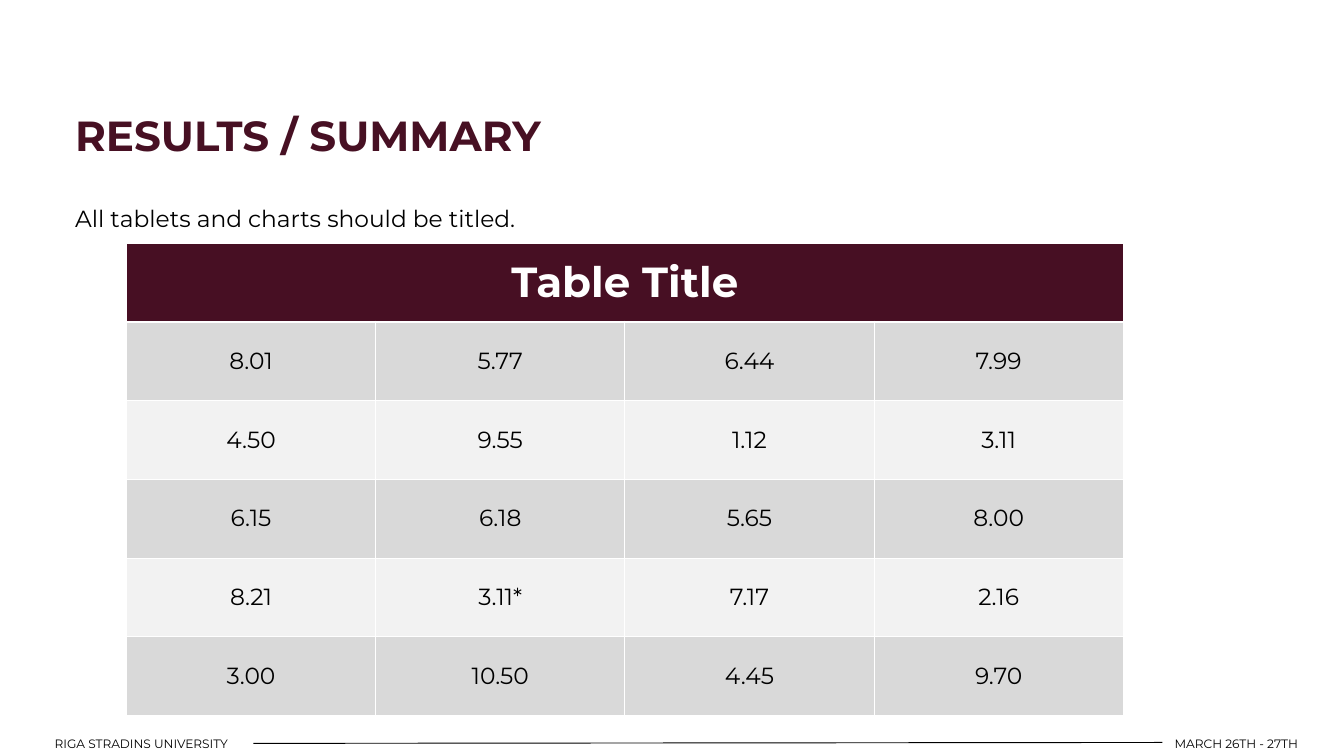
from lxml.etree import SubElement
from pptx import Presentation
from pptx.dml.color import RGBColor
from pptx.enum.shapes import MSO_CONNECTOR
from pptx.enum.text import MSO_ANCHOR, PP_ALIGN
from pptx.oxml.ns import qn
from pptx.util import Pt

MAROON, BLACK, WHITE = "471023", "000000", "FFFFFF"
HEADER_FILL, BAND_FILLS = "470F23", ("D9D9D9", "F2F2F2")
READINGS = [
    ("8.01", "5.77", "6.44", "7.99"),
    ("4.50", "9.55", "1.12", "3.11"),
    ("6.15", "6.18", "5.65", "8.00"),
    ("8.21", "3.11*", "7.17", "2.16"),
    ("3.00", "10.50", "4.45", "9.70"),
]


def rgb(code):
    return RGBColor.from_string(code)


def write(frame, text, size=25, color=BLACK, bold=False, align=PP_ALIGN.LEFT,
          spacing=None, font="Montserrat"):
    paragraph = frame.paragraphs[0]
    paragraph.alignment = align
    if spacing:
        paragraph.line_spacing = Pt(spacing)
    run = paragraph.add_run()
    run.text = text
    run.font.name, run.font.size, run.font.bold = font, Pt(size), bold
    run.font.color.rgb = rgb(color)


class SlideBuilder:
    """Draws the elements of one slide in a shared style, with lengths in points."""

    def __init__(self, slide):
        self.slide = slide

    def text(self, left, top, width, height, text, **style):
        frame = self.slide.shapes.add_textbox(
            Pt(left), Pt(top), Pt(width), Pt(height)).text_frame
        frame.word_wrap = True
        frame.margin_left = frame.margin_right = 0
        frame.margin_top = frame.margin_bottom = 0
        write(frame, text, **style)

    def rule(self, x1, y1, x2, y2):
        rule = self.slide.shapes.add_connector(
            MSO_CONNECTOR.STRAIGHT, Pt(x1), Pt(y1), Pt(x2), Pt(y2))
        rule.line.color.rgb = rgb(BLACK)
        rule.line.width = Pt(1)
        SubElement(rule._element.spPr, qn("a:effectLst"))

    def cell(self, cell, fill, top=1, bottom=1):
        properties = cell._tc.get_or_add_tcPr()
        for side, width in (("L", 1), ("R", 1), ("T", top), ("B", bottom)):
            border = SubElement(properties, qn(f"a:ln{side}"), w=str(Pt(width)))
            solid = SubElement(border, qn("a:solidFill"))
            SubElement(solid, qn("a:srgbClr"), val=WHITE)
        cell.fill.solid()
        cell.fill.fore_color.rgb = rgb(fill)
        cell.vertical_anchor = MSO_ANCHOR.MIDDLE

    def table(self, left, top, width, height, title, rows):
        row_count, column_count = len(rows) + 1, len(rows[0])
        table = self.slide.shapes.add_table(
            row_count, column_count, Pt(left), Pt(top), Pt(width), Pt(height)).table
        for row in table.rows:
            row.height = Pt(height / row_count)
        for header_cell in table.rows[0].cells:
            self.cell(header_cell, HEADER_FILL, bottom=3)
        header = table.cell(0, 0)
        header.merge(table.cell(0, column_count - 1))
        write(header.text_frame, title, size=45, color=WHITE, bold=True,
              align=PP_ALIGN.CENTER)
        for r, values in enumerate(rows):
            for c, value in enumerate(values):
                cell = table.cell(r + 1, c)
                self.cell(cell, BAND_FILLS[r % 2], top=1 if r else 3)
                write(cell.text_frame, value, align=PP_ALIGN.CENTER)


def main():
    presentation = Presentation()
    presentation.slide_width, presentation.slide_height = Pt(1440), Pt(810)
    builder = SlideBuilder(presentation.slides.add_slide(presentation.slide_layouts[6]))

    footer = {"size": 13, "spacing": 18.2}
    builder.text(1258.5, 786, 140, 17.5, "MARCH 26TH - 27TH", **footer)
    builder.text(44, 786, 200, 17.5, "RIGA STRADINS UNIVERSITY",
                 align=PP_ALIGN.RIGHT, **footer)
    builder.rule(271.5, 796.5, 1245.5, 795.5)

    builder.text(80.5, 108.5, 1177, 60, "RESULTS / SUMMARY", size=45, color=MAROON,
                 bold=True, align=PP_ALIGN.JUSTIFY, spacing=63)
    builder.text(80.5, 214, 1014.5, 33, "All tablets and charts should be titled.",
                 align=PP_ALIGN.JUSTIFY, spacing=35)
    builder.table(135.5, 260.5, 1068, 506, "Table Title", READINGS)

    presentation.save("out.pptx")


if __name__ == "__main__":
    main()
